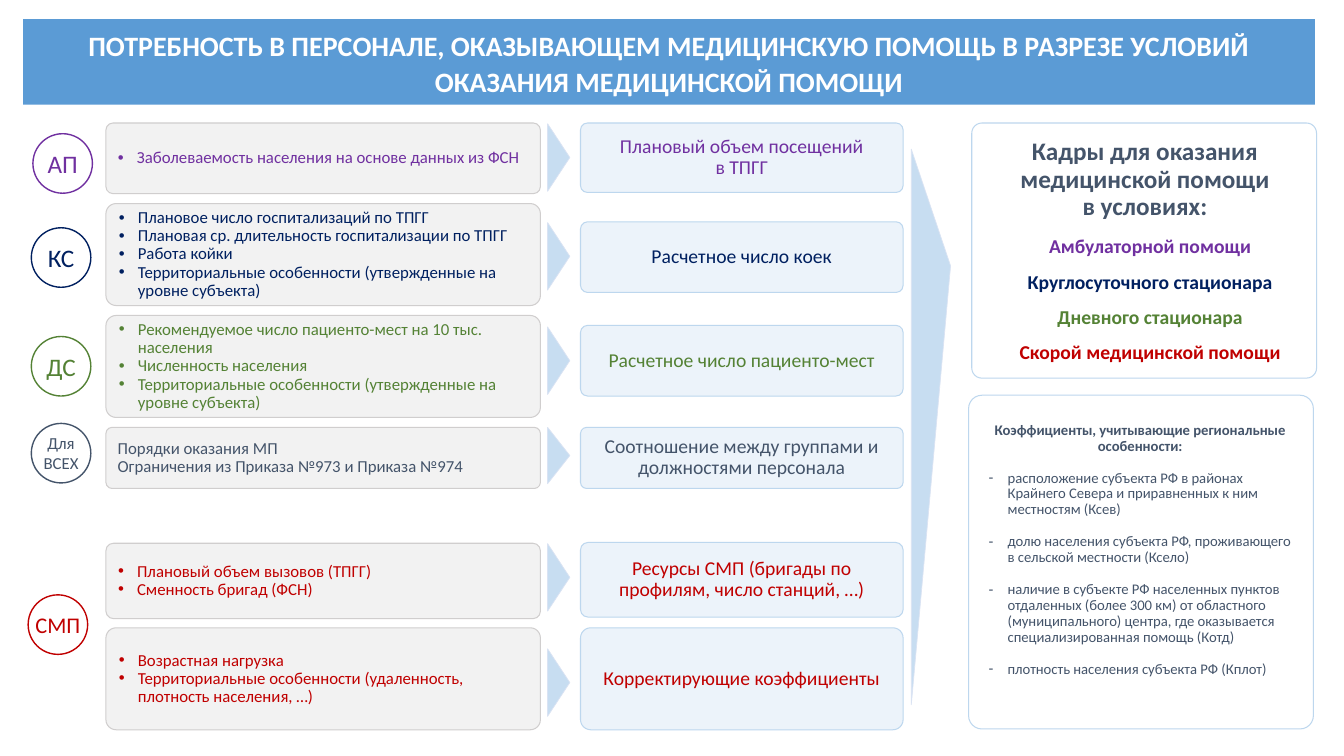
from lxml import etree
from pptx import Presentation
from pptx import util as u
from pptx.dml.color import RGBColor
from pptx.enum import shapes, text
from pptx.oxml import ns

PURPLE, NAVY, GREEN, SLATE, RED = "7030A0", "002060", "548235", "44546A", "C00000"
KIND, ALIGN = shapes.MSO_SHAPE, text.PP_ALIGN

deck = Presentation()
deck.slide_width, deck.slide_height = u.Cm(33.87), u.Cm(19.05)
page = deck.slides.add_slide(deck.slide_layouts[1])


def draw(kind, left, top, width, height, fill, line, weight=0.75, adjust=None):
    """Add a preset shape, lengths in centimetres."""
    shape = page.shapes.add_shape(kind, u.Cm(left), u.Cm(top), u.Cm(width), u.Cm(height))
    shape.shadow.inherit = False
    if fill:
        shape.fill.solid()
        shape.fill.fore_color.rgb = RGBColor.from_string(fill)
    else:
        shape.fill.background()
    shape.line.color.rgb = RGBColor.from_string(line)
    shape.line.width = u.Pt(weight)
    if adjust is not None:
        shape.adjustments[0] = adjust
    return shape


def write(frame, lines, size, colour, bold=False, align=ALIGN.CENTER,
          spacing=0.9, before=0, bullet=None):
    """Append one paragraph per line of text."""
    for line in lines:
        first = not frame.paragraphs[0].runs
        para = frame.paragraphs[0] if first else frame.add_paragraph()
        props = para._p.get_or_add_pPr()
        indent = u.Cm(0.48) if bullet else 0
        props.set("marL", str(indent))
        props.set("indent", str(-indent))
        if bullet:
            etree.SubElement(props, ns.qn("a:buFont"), typeface="Arial")
            etree.SubElement(props, ns.qn("a:buChar"), char=bullet)
        else:
            etree.SubElement(props, ns.qn("a:buNone"))
        para.alignment = align
        para.line_spacing = spacing
        para.space_before = u.Pt(before)
        para.space_after = u.Pt(0)
        span = para.add_run()
        span.text = line
        span.font.name = "Calibri"
        span.font.size = u.Pt(size)
        span.font.bold = bold
        span.font.color.rgb = RGBColor.from_string(colour)


# Title and list placeholders
title, factors = page.placeholders[0], page.placeholders[1]
for holder, anchor, place in (
    (title, text.MSO_ANCHOR.MIDDLE, (0.58, 0.48, 32.56, 2.16)),
    (factors, text.MSO_ANCHOR.TOP, (24.66, 10.52, 8.15, 7.11)),
):
    holder.left, holder.top, holder.width, holder.height = map(u.Cm, place)
    holder.text_frame.auto_size = text.MSO_AUTO_SIZE.NONE
    holder.text_frame.word_wrap = True
    holder.text_frame.vertical_anchor = anchor

title.fill.solid()
title.fill.fore_color.rgb = RGBColor.from_string("5B9BD5")
write(title.text_frame, [
    "ПОТРЕБНОСТЬ В ПЕРСОНАЛЕ, ОКАЗЫВАЮЩЕМ МЕДИЦИНСКУЮ ПОМОЩЬ В РАЗРЕЗЕ УСЛОВИЙ "
    "ОКАЗАНИЯ МЕДИЦИНСКОЙ ПОМОЩИ"], 20, "FFFFFF", bold=True, spacing=u.Pt(26))

# Regional factors
write(factors.text_frame, ["Коэффициенты, учитывающие региональные особенности:"],
      10.5, SLATE, bold=True)
write(factors.text_frame, [
    "расположение субъекта РФ в районах Крайнего Севера и приравненных к ним местностям (Ксев)",
    "долю населения субъекта РФ, проживающего в сельской местности (Ксело)",
    "наличие в субъекте РФ населенных пунктов отдаленных (более 300 км) от областного "
    "(муниципального) центра, где оказывается специализированная помощь (Котд)",
    "плотность населения субъекта РФ (Кплот)",
], 10.5, SLATE, align=ALIGN.LEFT, before=11.5, bullet="-")

# Rows: colour, input (top, height), result (top, height), arrow (middle, length), texts
rows = [
    (PURPLE, (3.1, 1.78), (3.1, 1.75), (3.97, 1.7),
     ["Заболеваемость населения на основе данных из ФСН"],
     ["Плановый объем посещений", "в ТПГГ"]),
    (NAVY, (5.13, 2.57), (5.59, 1.78), (6.46, 1.7),
     ["Плановое число госпитализаций по ТПГГ",
      "Плановая ср. длительность госпитализации по ТПГГ",
      "Работа койки",
      "Территориальные особенности (утвержденные на уровне субъекта)"],
     ["Расчетное число коек"]),
    (GREEN, (7.95, 2.57), (8.2, 1.78), (9.09, 1.7),
     ["Рекомендуемое число пациенто-мест на 10 тыс. населения",
      "Численность населения",
      "Территориальные особенности (утвержденные на уровне субъекта)"],
     ["Расчетное число пациенто-мест"]),
    (SLATE, (10.77, 1.54), (10.77, 1.54), (11.48, 1.42),
     ["Порядки оказания МП", "Ограничения из Приказа №973 и Приказа №974"],
     ["Соотношение между группами и должностями персонала"]),
    (RED, (13.69, 1.9), (13.67, 1.88), (14.55, 1.7),
     ["Плановый объем вызовов (ТПГГ)", "Сменность бригад (ФСН)"],
     ["Ресурсы СМП (бригады по профилям, число станций, …)"]),
    (RED, (15.82, 2.57), (15.82, 2.57), (17.2, 1.7),
     ["Возрастная нагрузка",
      "Территориальные особенности (удаленность, плотность населения, …)"],
     ["Корректирующие коэффициенты"]),
]
# Arrows: centre x, centre y, length, depth, tip position
arrows = [(23.46, 10.76, 14, 0.99, 0.21)]
for colour, source, result, (middle, length), inputs, outputs in rows:
    box = draw(KIND.ROUNDED_RECTANGLE, 2.67, source[0], 10.95, source[1],
               "F2F2F2", "D0CECE", adjust=0.1)
    write(box.text_frame, inputs, 12, colour, align=ALIGN.LEFT,
          bullet=None if colour == SLATE else "•")
    box = draw(KIND.ROUNDED_RECTANGLE, 14.63, result[0], 8.13, result[1],
               "ECF3FA", "BDD7EE", adjust=0.1)
    write(box.text_frame, outputs, 14, colour)
    arrows.append((14.08, middle, length, 0.56, 0.5))

for x, y, length, depth, tip in arrows:
    arrow = draw(KIND.ISOSCELES_TRIANGLE, x - length / 2, y - depth / 2, length, depth,
                 "C7DDF1", "DAE3F3", 0.5, tip)
    arrow.rotation = 90

# Round badges
for label, x, y, size, colour in (
    ("АП", 1.58, 4.12, 18, PURPLE),
    ("КС", 1.54, 6.49, 18, NAVY),
    ("ДС", 1.54, 9.23, 18, GREEN),
    ("Для ВСЕХ", 1.54, 11.42, 12, SLATE),
    ("СМП", 1.46, 15.74, 16, RED),
):
    badge = draw(KIND.OVAL, x - 0.75, y - 0.75, 1.5, 1.5, None, colour, 1)
    frame = badge.text_frame
    frame.margin_left = frame.margin_right = frame.margin_top = frame.margin_bottom = 0
    frame.word_wrap = " " in label
    write(frame, [label], size, colour, spacing=1)

# Cards on the right
for left, top, height in ((24.49, 3.1, 6.43), (24.41, 9.96, 8.41)):
    draw(KIND.ROUNDED_RECTANGLE, left, top, 8.69, height, None, "BDD7EE", adjust=0.04)

# Staff by type of care
heading = page.shapes.add_textbox(u.Cm(25.3), u.Cm(3.38), u.Cm(7.11), u.Cm(2.34))
heading.text_frame.word_wrap = True
write(heading.text_frame, ["Кадры для оказания", "медицинской помощи", "в условиях:"],
      18, SLATE, bold=True)
staff = page.shapes.add_textbox(u.Cm(25.43), u.Cm(5.84), u.Cm(7.11), u.Cm(3.4))
staff.text_frame.word_wrap = True
for line, colour, spacing in (
    ("Амбулаторной помощи", PURPLE, 0.9),
    ("Круглосуточного стационара", NAVY, 1.5),
    ("Дневного стационара", GREEN, 1.5),
    ("Скорой медицинской помощи", RED, 1.5),
):
    write(staff.text_frame, [line], 14, colour, bold=True, spacing=spacing)

deck.save("out.pptx")
